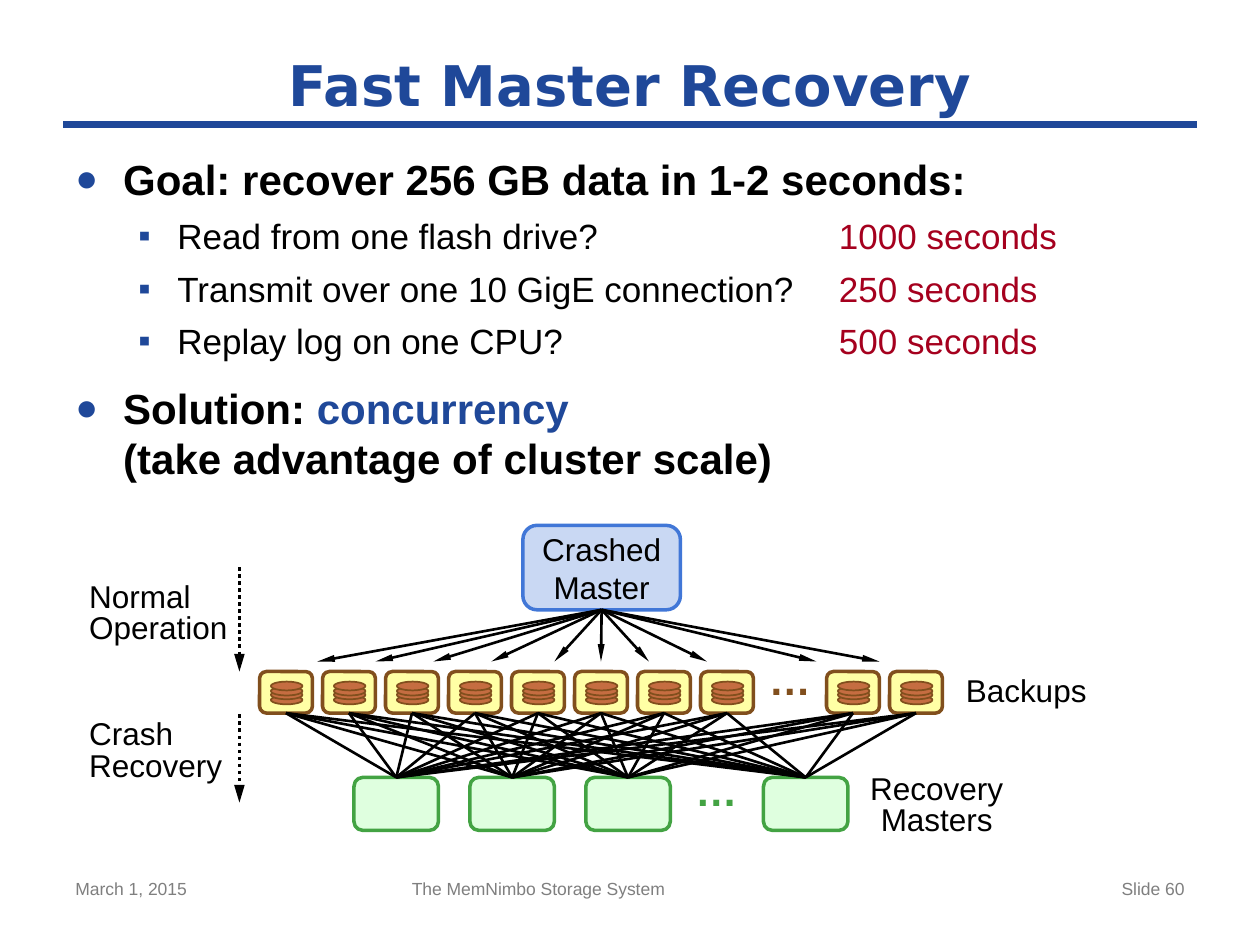
from dataclasses import dataclass
from itertools import product

from lxml import etree
from pptx import Presentation
from pptx import util as u
from pptx.dml.color import RGBColor
from pptx.enum import dml, shapes, text
from pptx.oxml.ns import qn

Inches, Pt = u.Inches, u.Pt
ALIGN = text.PP_ALIGN
KIND = shapes.MSO_SHAPE


@dataclass(frozen=True)
class Theme:
    """Colours, fonts and type sizes of the slide."""

    blue: str = "1F4899"
    red: str = "A5001E"
    black: str = "000000"
    gray: str = "7F7F7F"
    brown: str = "814F1D"
    yellow: str = "FFFFA5"
    copper: str = "C56D41"
    green: str = "43A343"
    mint: str = "DFFFDF"
    sky: str = "C9D8F3"
    azure: str = "4177D7"
    font: str = "Arial"
    head: str = "DejaVu Sans"
    title: int = 32
    large: int = 24
    body: int = 20
    label: int = 18
    small: int = 10


T = Theme()


def color(code):
    """Turn a hex code into a colour."""
    return RGBColor.from_string(code)


def style(run, size, tint, bold=False, font=T.font):
    """Format one run."""
    run.font.size = Pt(size)
    run.font.bold = bold
    run.font.name = font
    run.font.color.rgb = color(tint)


def fill_text(frame, words, size, tint, bold=False, font=T.font,
              align=ALIGN.LEFT, pitch=None):
    """Set the words of a frame and format all of them alike."""
    frame.text = words
    for para in frame.paragraphs:
        para.alignment = align
        if pitch:
            para.line_spacing = Pt(pitch)
        for run in para.runs:
            style(run, size, tint, bold, font)


def add_label(slide, box, words, size, tint, wrap=False, anchor="TOP", **look):
    """Add a text box."""
    frame = slide.shapes.add_textbox(*map(Inches, box)).text_frame
    frame.word_wrap = wrap
    frame.vertical_anchor = text.MSO_ANCHOR[anchor]
    fill_text(frame, words, size, tint, **look)


def add_box(parent, kind, box, fill, edge, width=2):
    """Add a filled and outlined shape to a slide or group."""
    shape = parent.shapes.add_shape(kind, *map(Inches, box))
    shape.shadow.inherit = False
    shape.fill.solid()
    shape.fill.fore_color.rgb = color(fill)
    shape.line.color.rgb = color(edge)
    shape.line.width = Pt(width)
    return shape


def add_line(slide, start, end, tint=T.black, width=1.5, head=None, dash=None):
    """Join two ends, each a point or a pair of shape and side."""
    line = slide.shapes.add_connector(shapes.MSO_CONNECTOR.STRAIGHT, 0, 0, 0, 0)
    if isinstance(start[0], (int, float)):
        line.begin_x, line.begin_y = map(Inches, start)
    else:
        line.begin_connect(*start)
    if isinstance(end[0], (int, float)):
        line.end_x, line.end_y = map(Inches, end)
    else:
        line.end_connect(*end)
    line.line.color.rgb = color(tint)
    line.line.width = Pt(width)
    if dash:
        line.line.dash_style = dash
    props = line.element.spPr
    if head:
        etree.SubElement(props.find(qn("a:ln")), qn("a:tailEnd"),
                         type="triangle", w=head, len="lg")
    etree.SubElement(props, qn("a:effectLst"))


def add_point(para, parts, deep, tab=None):
    """Fill one bullet with pairs of words and colour, None being a break."""
    size = T.body if deep else T.large
    for part in parts:
        if part is None:
            para.add_line_break()
            continue
        run = para.add_run()
        run.text = part[0]
        style(run, size, part[1], not deep)
    para.level = int(deep)
    para.space_before = Pt(6 if deep else 12)
    left, hang = (0.81, 0.31) if deep else (0.38, 0.38)
    props = para._p.get_or_add_pPr()
    props.set("marL", str(Inches(left)))
    props.set("indent", str(-Inches(hang)))
    tint = etree.SubElement(props, qn("a:buClr"))
    etree.SubElement(tint, qn("a:srgbClr"), val=T.blue)
    etree.SubElement(props, qn("a:buSzPct"), val="100000" if deep else "90000")
    etree.SubElement(props, qn("a:buFont"), typeface=T.font)
    etree.SubElement(props, qn("a:buChar"), char="▪" if deep else "●")
    if tab:
        tabs = etree.SubElement(props, qn("a:tabLst"))
        etree.SubElement(tabs, qn("a:tab"), pos=str(Inches(tab)), algn="l")


def add_points(slide):
    """Add the bulleted goal and solution."""
    frame = slide.shapes.add_textbox(*map(Inches, (0.5, 1.17, 9, 3))).text_frame
    frame.word_wrap = True
    add_point(frame.paragraphs[0],
              [("Goal: recover 256 GB data in 1-2 seconds:", T.black)], False)
    for task, time in (("Read from one flash drive?", 1000),
                       ("Transmit over one 10 GigE connection?", 250),
                       ("Replay log on one CPU?", 500)):
        parts = [(f"{task}\t", T.black), (f"{time} seconds", T.red)]
        add_point(frame.add_paragraph(), parts, True, 6.06)
    add_point(frame.add_paragraph(),
              [("Solution: ", T.black), ("concurrency", T.blue), None,
               ("(take advantage of cluster scale)", T.black)], False)


def add_backup(slide, left):
    """Add a backup server with its stack of disks and return its frame."""
    group = slide.shapes.add_group_shape()
    case = add_box(group, KIND.ROUNDED_RECTANGLE, (left, 5.33, 0.42, 0.33),
                   T.yellow, T.brown)
    for top in (5.52, 5.48, 5.45, 5.41):
        add_box(group, KIND.OVAL, (left + 0.09, top, 0.25, 0.07),
                T.copper, T.brown, 1)
    return case


def add_cluster(slide):
    """Add the master, the backups, the recovery masters and their links."""
    backups = [add_backup(slide, 2.06 + 0.5 * i) for i in range(11) if i != 8]
    master = add_box(slide, KIND.ROUNDED_RECTANGLE, (4.15, 4.17, 1.25, 0.67),
                     T.sky, T.azure)
    frame = master.text_frame
    frame.word_wrap = False
    frame.vertical_anchor = text.MSO_ANCHOR.MIDDLE
    fill_text(frame, "Crashed\vMaster", T.label, T.black, align=ALIGN.CENTER)
    for x in (2.52, 2.98, 3.44, 3.9, 4.4, 4.77, 5.15, 5.61, 6.48, 6.98):
        add_line(slide, (master, 2), (x, 5.25), head="sm")
    heirs = [add_box(slide, KIND.ROUNDED_RECTANGLE, (x, 6.17, 0.67, 0.42),
                     T.mint, T.green) for x in (2.81, 3.73, 4.65, 6.06)]
    for backup, heir in product(backups, heirs):
        add_line(slide, (backup, 2), (heir, 0))
    for box, tint in (((6, 5.14, 0.54, 0.5), T.brown),
                      ((5.31, 6.02, 0.75, 0.5), T.green)):
        add_label(slide, box, "…", T.large, tint, bold=True, align=ALIGN.CENTER)


def add_notes(slide):
    """Add the names of the rows and phases, and the phase arrows."""
    for box, words, align in (
            ((7.56, 5.33, 1.17, 0.35), "Backups", ALIGN.CENTER),
            ((6.8, 6.1, 1.27, 0.61), "Recovery\nMasters", ALIGN.CENTER),
            ((0.61, 4.58, 1.31, 0.61), "Normal\vOperation", ALIGN.LEFT),
            ((0.61, 5.67, 1.27, 0.61), "Crash\vRecovery", ALIGN.LEFT)):
        add_label(slide, box, words, T.label, T.black, align=align, pitch=18)
    for top, end in ((4.5, 5.33), (5.67, 6.37)):
        add_line(slide, (1.9, top), (1.9, end), width=2, head="med",
                 dash=dml.MSO_LINE.ROUND_DOT)


def main():
    """Build and save the slide."""
    deck = Presentation()
    deck.slide_width, deck.slide_height = Inches(10), Inches(7.5)
    slide = deck.slides.add_slide(deck.slide_layouts[6])
    add_line(slide, (0.5, 0.99), (9.5, 0.99), T.blue, 4)
    add_points(slide)
    for left, width, words, align in (
            (0.5, 2.33, "March 1, 2015", ALIGN.LEFT),
            (3.17, 3.75, "The MemNimbo Storage System", ALIGN.LEFT),
            (7.17, 2.33, "Slide 60", ALIGN.RIGHT)):
        add_label(slide, (left, 6.92, width, 0.43), words, T.small, T.gray,
                  wrap=True, align=align)
    add_label(slide, (0.5, 0.33, 9, 0.67), "Fast Master Recovery", T.title,
              T.blue, wrap=True, anchor="MIDDLE", bold=True, font=T.head,
              align=ALIGN.CENTER)
    add_cluster(slide)
    add_notes(slide)
    deck.save("out.pptx")


if __name__ == "__main__":
    main()
